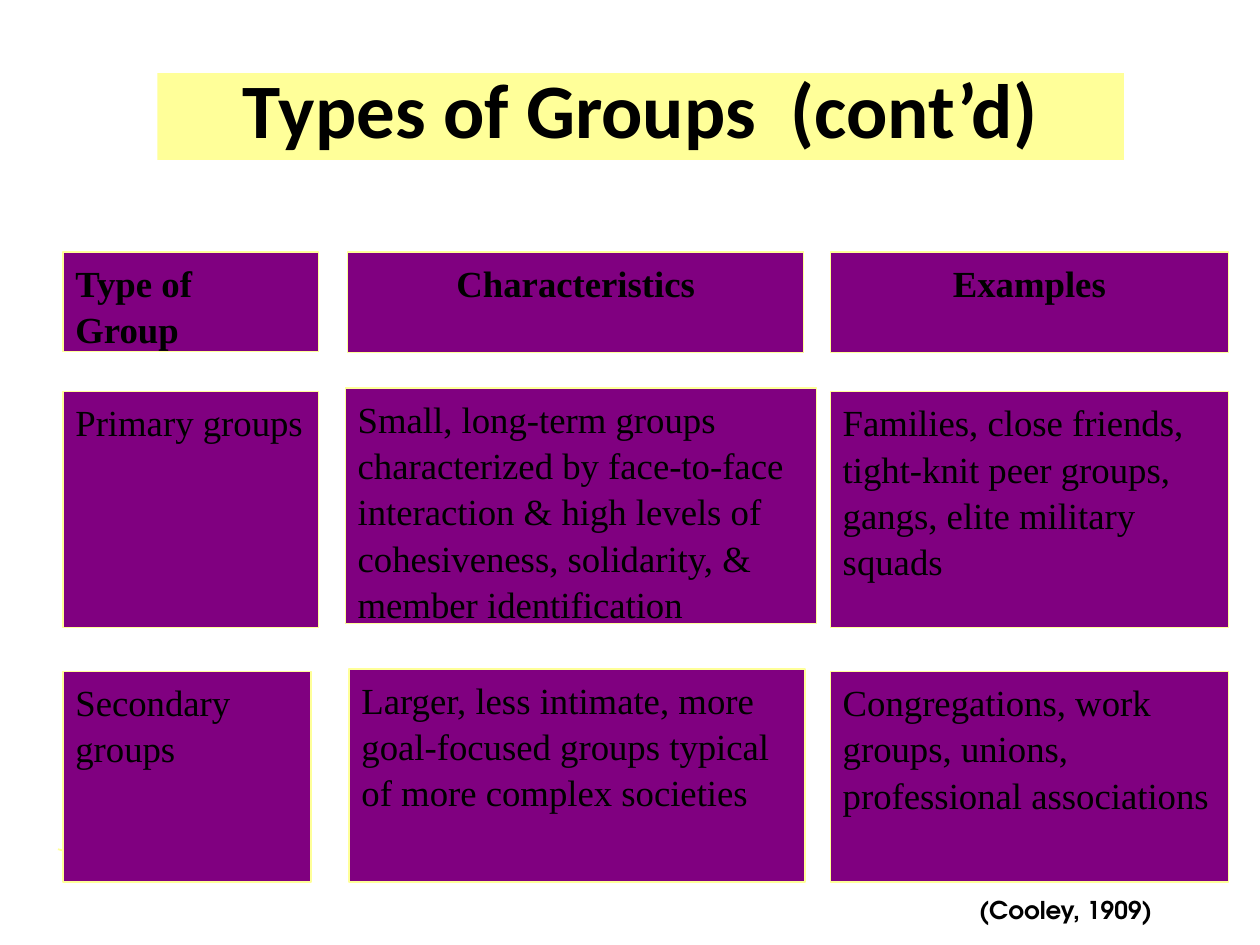
from pptx import Presentation
from pptx.dml.color import RGBColor
from pptx.enum.shapes import MSO_CONNECTOR, MSO_SHAPE
from pptx.enum.text import MSO_ANCHOR, PP_ALIGN
from pptx.oxml.ns import qn
from pptx.util import Inches, Pt
from lxml import etree

RECT, LINE = MSO_SHAPE.RECTANGLE, MSO_CONNECTOR.STRAIGHT
TOP, LEFT, MID = MSO_ANCHOR.TOP, PP_ALIGN.LEFT, PP_ALIGN.CENTER
COLORS = {"box": "800080", "edge": "FFFF99", "text": "000000"}

TITLE = "Types of Groups  (cont’d)"
SOURCE = "(Cooley, 1909)"
ROWS = [
    ("Type of\vGroup", "Characteristics", "Examples"),
    ("Primary groups",
     "Small, long-term groups characterized by face-to-face interaction "
     "& high levels of cohesiveness, solidarity, & member identification",
     "Families, close friends, tight-knit peer groups, gangs, elite military squads"),
    ("Secondary groups",
     "Larger, less intimate, more goal-focused groups typical of more complex societies",
     "Congregations, work groups, unions, professional associations"),
]
COLS = [(0.5, 2.03), (2.76, 3.62), (6.59, 3.16)]  # left, width
BANDS = [(2, 0.8), (3.11, 1.87), (5.33, 1.67)]  # top, height
# (row, column): shift of left, top, width, height from the grid
NUDGE = {
    (0, 0): (0, 0, 0, -0.01),
    (1, 1): (-0.02, -0.03, 0.12, 0),
    (2, 0): (0, 0, -0.06, 0),
    (2, 1): (0.01, -0.02, 0, 0.02),
}


def rgb(name):
    return RGBColor.from_string(COLORS[name])


def write(shape, text, font, size, bold=False, align=LEFT, space=1.0):
    frame = shape.text_frame
    frame.word_wrap = True
    frame.vertical_anchor = TOP
    frame.text = text
    para = frame.paragraphs[0]
    para.alignment, para.line_spacing = align, space
    para.font.name, para.font.size, para.font.bold = font, Pt(size), bold
    para.font.color.rgb = rgb("text")


def block(slide, place, fill, edge=None):
    shape = slide.shapes.add_shape(RECT, *map(Inches, place))
    shape.shadow.inherit = False
    shape.fill.solid()
    shape.fill.fore_color.rgb = rgb(fill)
    if edge:
        shape.line.color.rgb = rgb(edge)
        shape.line.width = Pt(0.75)
    else:
        shape.line.fill.background()
    return shape


def main():
    deck = Presentation()
    deck.slide_width, deck.slide_height = Inches(10), Inches(7.5)
    slide = deck.slides.add_slide(deck.slide_layouts[6])

    for r, (top, height) in enumerate(BANDS):
        for c, (left, width) in enumerate(COLS):
            shift = NUDGE.get((r, c), (0, 0, 0, 0))
            place = [a + b for a, b in zip((left, top, width, height), shift)]
            head = r == 0
            write(block(slide, place, "box", "edge"), ROWS[r][c],
                  "Times New Roman", 21, head, MID if head and c else LEFT, 1.05)

    tick = slide.shapes.add_connector(LINE, *map(Inches, (0.5, 6.75, 0.46, 6.74)))
    tick.line.color.rgb = rgb("edge")
    tick.line.width = Pt(1)
    etree.SubElement(tick._element.spPr, qn("a:effectLst"))

    note = slide.shapes.add_textbox(*map(Inches, (7.67, 7.08, 1.92, 0.61)))
    write(note, SOURCE, "TeX Gyre Adventor", 14, True, space=0.9)
    write(block(slide, (1.25, 0.58, 7.67, 0.69), "edge"), TITLE,
          "Calibri", 44, True, MID, 0.8)
    deck.save("out.pptx")


if __name__ == "__main__":
    main()
